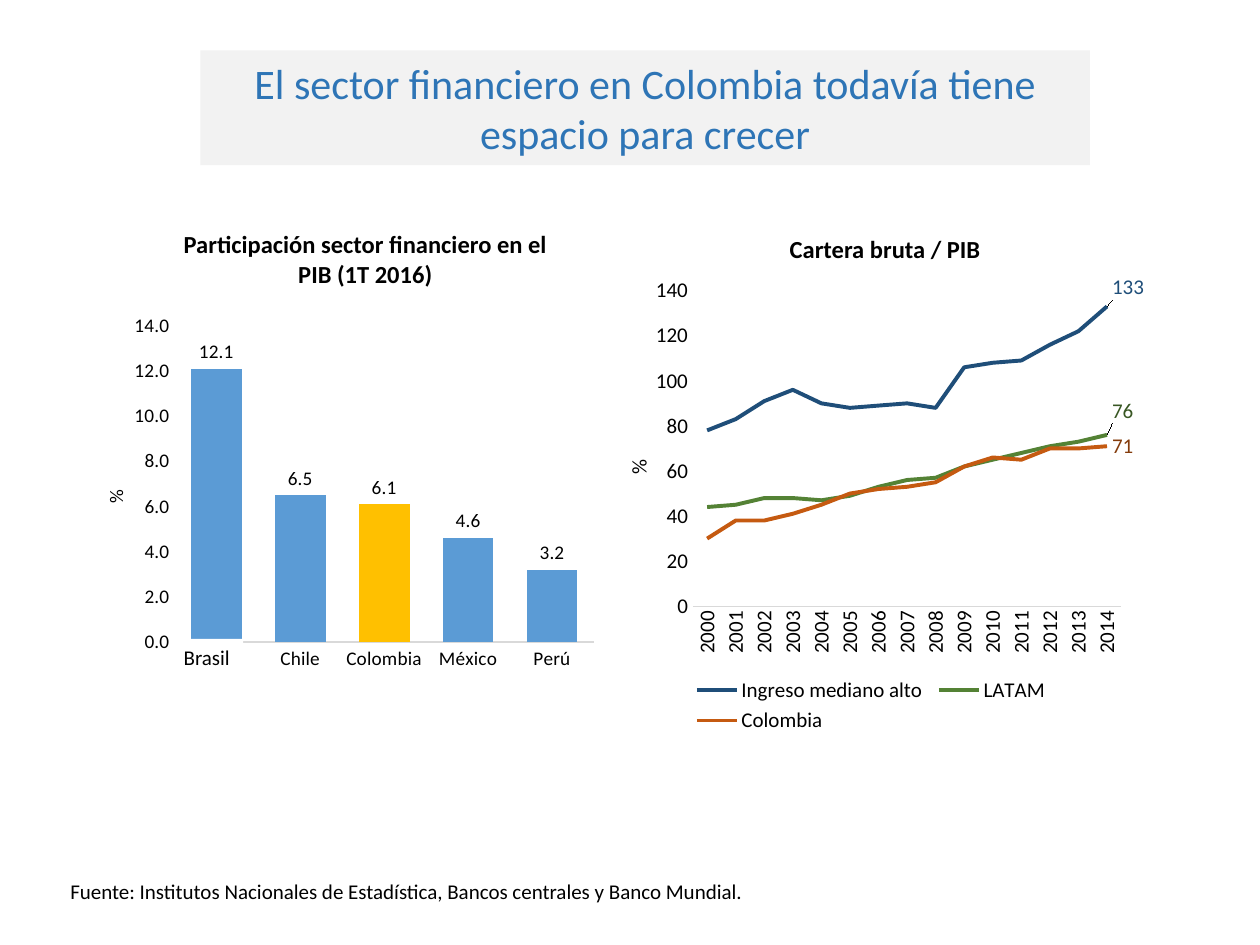
from lxml.etree import SubElement
from pptx import Presentation
from pptx.chart.data import CategoryChartData
from pptx.dml.color import RGBColor
from pptx.enum.chart import XL_CHART_TYPE, XL_LABEL_POSITION, XL_LEGEND_POSITION, XL_TICK_MARK
from pptx.enum.shapes import MSO_SHAPE
from pptx.enum.text import MSO_ANCHOR, MSO_AUTO_SIZE, PP_ALIGN
from pptx.oxml.ns import qn
from pptx.util import Inches, Pt

COLORS = {
    "text": "000000", "white": "FFFFFF", "title": "2E75B6", "title_fill": "F2F2F2",
    "axis": "D9D9D9", "bar": "5B9BD5", "highlight": "FFC000",
    "high_income": "1F4E79", "latam": "548235", "colombia": "C55A11",
    "latam_label": "385723", "colombia_label": "843C0C",
}
COUNTRIES = ["Brasil", "Chile", "Colombia", "México", "Perú"]
GDP_SHARES = [12.1, 6.5, 6.1, 4.6, 3.2]
YEARS = [str(year) for year in range(2000, 2015)]
# name, values, line colour, end label colour, upward shift of the end label
LOAN_SERIES = [
    ("Ingreso mediano alto",
     [78, 83, 91, 96, 90, 88, 89, 90, 88, 106, 108, 109, 116, 122, 133],
     "high_income", "high_income", -0.04),
    ("LATAM", [44, 45, 48, 48, 47, 49, 53, 56, 57, 62, 65, 68, 71, 73, 76],
     "latam", "latam_label", -0.05),
    ("Colombia", [30, 38, 38, 41, 45, 50, 52, 53, 55, 62, 66, 65, 70, 70, 71],
     "colombia", "colombia_label", 0),
]


def rgb(color):
    return RGBColor.from_string(COLORS[color])


def format_font(font, size, color="text", bold=False):
    for name, value in {"name": "Calibri", "size": Pt(size), "bold": bold}.items():
        setattr(font, name, value)
    font.color.rgb = rgb(color)


def fill_solid(target, color):
    target.fill.solid()
    target.fill.fore_color.rgb = rgb(color)


def place(shape, box):
    for name, value in zip(("left", "top", "width", "height"), box):
        setattr(shape, name, Inches(value))


def write_text(shape, text, size, color="text", bold=False, align=PP_ALIGN.LEFT,
               anchor=MSO_ANCHOR.TOP, wrap=True):
    frame = shape.text_frame
    frame.text = text
    settings = {"word_wrap": wrap, "vertical_anchor": anchor,
                "auto_size": MSO_AUTO_SIZE.SHAPE_TO_FIT_TEXT}
    for name, value in settings.items():
        setattr(frame, name, value)
    frame.paragraphs[0].alignment = align
    format_font(frame.paragraphs[0].runs[0].font, size, color, bold)


def add_text(slide, box, text, size, **style):
    write_text(slide.shapes.add_textbox(*map(Inches, box)), text, size, **style)


def add_layout(previous, inner=False, **fractions):
    """Insert a manual chart layout right after the given element."""
    layout = previous.makeelement(qn("c:layout"))
    manual = SubElement(layout, qn("c:manualLayout"))
    settings = {"layoutTarget": "inner"} if inner else {}
    if "w" in fractions:
        settings.update(xMode="edge", yMode="edge")
    elif "mode" in fractions:
        settings.update(xMode=fractions["mode"], yMode=fractions.pop("mode"))
    settings.update(fractions)
    for tag, value in settings.items():
        SubElement(manual, qn(f"c:{tag}")).set("val", str(value))
    following = previous.getnext()
    if following is not None and following.tag == layout.tag:
        following.getparent().remove(following)
    previous.addnext(layout)


def set_plot_layout(chart, **fractions):
    plot_area = chart.plots[0]._element.getparent()
    for layout in plot_area.findall(qn("c:layout")):
        plot_area.remove(layout)
    first = plot_area[0]
    add_layout(first, inner=True, **fractions)
    plot_area.insert(0, first.getnext())


def format_axes(chart, size, maximum, step, number_format, title_x, title_y):
    for axis in (chart.category_axis, chart.value_axis):
        axis.has_major_gridlines = False
        axis.major_tick_mark = axis.minor_tick_mark = XL_TICK_MARK.NONE
        format_font(axis.tick_labels.font, size)
    line = chart.category_axis.format.line
    line.color.rgb = rgb("axis")
    line.width = Pt(0.75)

    values = chart.value_axis
    values.format.line.fill.background()
    for name, value in {"minimum_scale": 0, "maximum_scale": maximum,
                        "major_unit": step}.items():
        setattr(values, name, value)
    values.tick_labels.number_format = number_format
    values.tick_labels.number_format_is_linked = False
    frame = values.axis_title.text_frame
    frame.text = "%"
    format_font(frame.paragraphs[0].runs[0].font, size)
    frame._txBody.find(qn("a:bodyPr")).set("rot", "-5400000")
    title = values.axis_title._element
    add_layout(title.find(qn("c:tx")), mode="edge", x=title_x, y=title_y)


def add_chart(slide, kind, box, categories, series, size):
    data = CategoryChartData()
    data.categories = categories
    for name, values in series:
        data.add_series(name, values)
    chart = slide.shapes.add_chart(kind, *map(Inches, box), data).chart
    chart.has_title = False
    chart.has_legend = False
    format_font(chart.font, size)
    return chart


def add_share_chart(slide):
    chart = add_chart(slide, XL_CHART_TYPE.COLUMN_CLUSTERED, (0.53, 2.44, 4.27, 2.95),
                      COUNTRIES, [("Series 1", GDP_SHARES)], 11)
    format_axes(chart, 11, 14, 2, "#,##0.0", 0.06, 0.48)
    set_plot_layout(chart, x=0.2, y=0.05, w=0.78, h=0.85)
    plot = chart.plots[0]
    for name, value in {"gap_width": 65, "overlap": -27, "vary_by_categories": False,
                        "has_data_labels": True}.items():
        setattr(plot, name, value)
    labels = plot.data_labels
    for name, value in {"show_value": True, "number_format": "#,##0.0",
                        "number_format_is_linked": False,
                        "position": XL_LABEL_POSITION.OUTSIDE_END}.items():
        setattr(labels, name, value)
    format_font(labels.font, 11)
    bars = plot.series[0]
    fill_solid(bars.format, "bar")
    fill_solid(bars.points[COUNTRIES.index("Colombia")].format, "highlight")


def add_loan_chart(slide):
    chart = add_chart(slide, XL_CHART_TYPE.LINE, (4.66, 2.12, 4.42, 3.74),
                      YEARS, [row[:2] for row in LOAN_SERIES], 12)
    format_axes(chart, 12, 140, 20, "0", 0.06, 0.4)
    set_plot_layout(chart, x=0.19, y=0.05, w=0.77, h=0.67)
    year_labels = chart.category_axis._element.find(qn("c:txPr"))
    year_labels.find(qn("a:bodyPr")).set("rot", "-5400000")

    chart.has_legend = True
    chart.legend.position = XL_LEGEND_POSITION.BOTTOM
    chart.legend.include_in_layout = False
    format_font(chart.legend.font, 12)
    add_layout(chart.legend._element.find(qn("c:legendPos")), x=0.18, y=0.86, w=0.66, h=0.14)

    for series, (_, _, color, label_color, shift) in zip(chart.plots[0].series, LOAN_SERIES):
        series.smooth = False
        series.format.line.color.rgb = rgb(color)
        series.format.line.width = Pt(2.25)
        label = series.points[len(YEARS) - 1].data_label
        format_font(label.font, 12, label_color)
        label.position = XL_LABEL_POSITION.RIGHT
        if shift:
            for index in series._element.iterfind(".//" + qn("c:dLbl") + "/" + qn("c:idx")):
                add_layout(index, x=0, y=shift)


def add_country_tag(slide):
    tag = slide.shapes.add_shape(MSO_SHAPE.RECTANGLE, *map(Inches, (1.36, 5.07, 0.57, 0.3)))
    tag.shadow.inherit = False
    fill_solid(tag, "white")
    tag.line.fill.background()
    write_text(tag, "Brasil", 12, wrap=False)


def main():
    deck = Presentation()
    deck.slide_width, deck.slide_height = Inches(10), Inches(7.5)
    slide = deck.slides.add_slide(deck.slide_layouts[5])

    title = slide.shapes.title
    place(title, (1.59, 0.4, 7.06, 0.91))
    fill_solid(title, "title_fill")
    write_text(title, "El sector financiero en Colombia todavía tiene espacio para crecer",
               24, "title", align=PP_ALIGN.CENTER, anchor=MSO_ANCHOR.MIDDLE)

    add_text(slide, (0.46, 6.92, 5.6, 0.3),
             "Fuente: Institutos Nacionales de Estadística, Bancos centrales y Banco Mundial.", 12)
    add_loan_chart(slide)
    heading = {"bold": True, "align": PP_ALIGN.CENTER}
    add_text(slide, (1.27, 1.77, 3.26, 0.88),
             "Participación sector financiero en el PIB (1T 2016)", 14, **heading)
    add_text(slide, (5.25, 1.81, 3.55, 0.64), "Cartera bruta / PIB", 14, **heading)
    add_share_chart(slide)
    add_country_tag(slide)
    deck.save("out.pptx")


if __name__ == "__main__":
    main()
